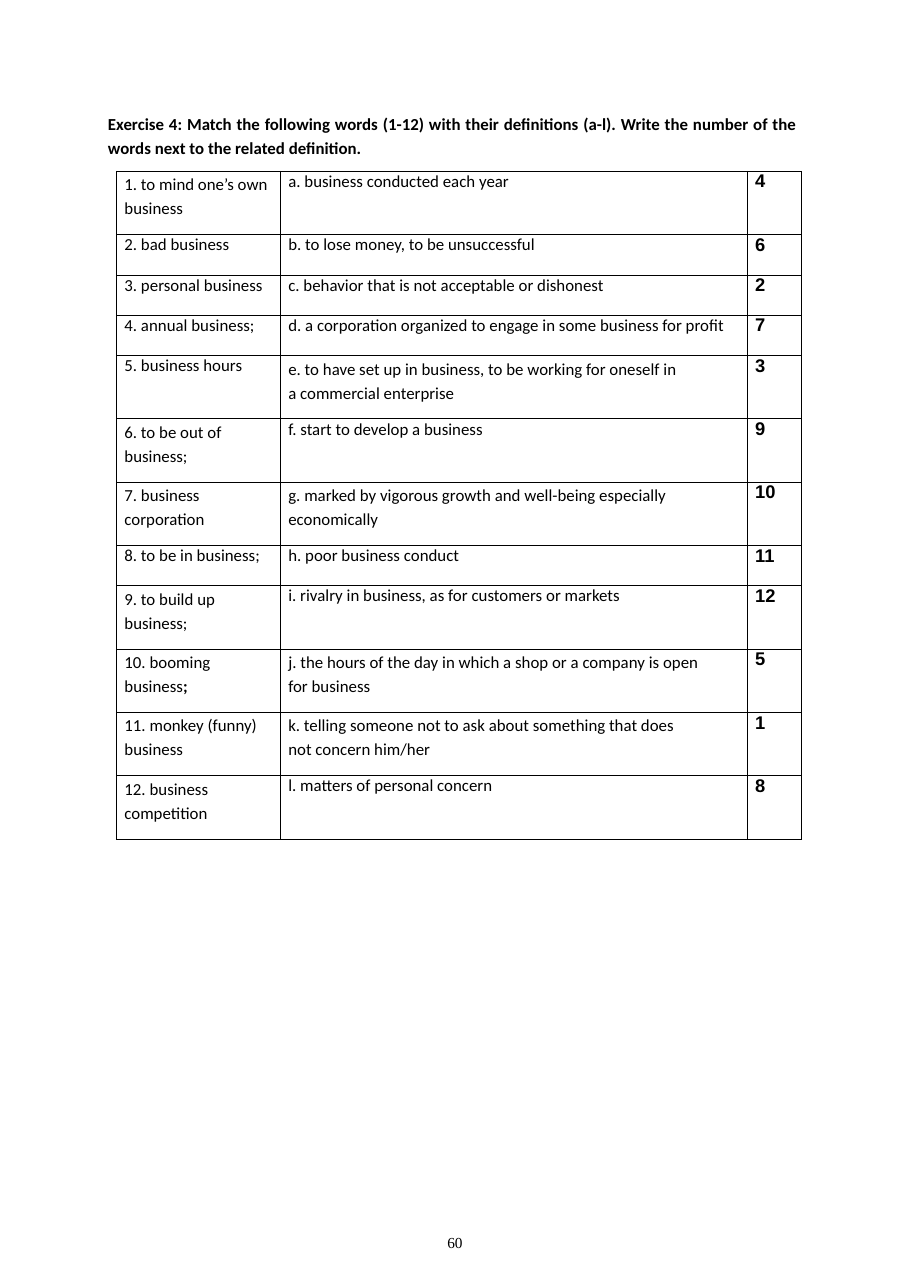
from dataclasses import dataclass

from lxml.etree import SubElement
from pptx import Presentation
from pptx.dml.color import RGBColor
from pptx.enum.text import MSO_ANCHOR, MSO_AUTO_SIZE, PP_ALIGN
from pptx.oxml.ns import qn
from pptx.util import Cm, Pt

TITLE = ("Exercise 4: Match the following words (1-12) with their definitions (a-l). "
         "Write the number of the words next to the related definition.")
PAGE = "60"

# word, lines it takes, definition, lines it takes, answer
ROWS = [
    ("1. to mind one’s own business", 2, "a. business conducted each year", 1, "4"),
    ("2. bad business", 1, "b. to lose money, to be unsuccessful", 1, "6"),
    ("3. personal business", 1, "c. behavior that is not acceptable or dishonest", 1, "2"),
    ("4. annual business;", 1,
     "d. a corporation organized to engage in some business for profit", 1, "7"),
    ("5. business hours", 1,
     "e. to have set up in business, to be working for oneself in a commercial enterprise",
     2, "3"),
    ("6. to be out of business;", 2, "f. start to develop a business", 1, "9"),
    ("7. business corporation", 2,
     "g. marked by vigorous growth and well-being especially economically", 2, "10"),
    ("8. to be in business;", 1, "h. poor business conduct", 1, "11"),
    ("9. to build up business;", 2, "i. rivalry in business, as for customers or markets",
     1, "12"),
    ("10. booming business;", 2,
     "j. the hours of the day in which a shop or a company is open for business", 2, "5"),
    ("11. monkey (funny) business", 2,
     "k. telling someone not to ask about something that does not concern him/her", 2, "1"),
    ("12. business competition", 2, "l. matters of personal concern", 1, "8"),
]
BOLD_END = "10. booming business;"
WIDTHS = [3.78, 10.77, 1.25]
HEIGHTS = {1: 0.93, 2: 1.46}
LEFT, TOP = 2.69, 3.95


@dataclass(frozen=True)
class Theme:
    ink: RGBColor = RGBColor(0, 0, 0)
    body: str = "Calibri"
    mark: str = "Arial"
    folio: str = "Times New Roman"
    text: float = 11
    answer: float = 12
    page: float = 10
    line: float = 0.58
    lead: float = 1.16
    head: float = 1.18


LOOK = Theme()


def add_run(para, text, font=LOOK.body, size=LOOK.text, bold=False):
    run = para.add_run()
    run.text = text
    run.font.name, run.font.size, run.font.bold = font, Pt(size), bold
    run.font.color.rgb = LOOK.ink


def clear_frame(frame):
    """Strip margins and fitting, and return the first paragraph."""
    frame.margin_left = frame.margin_right = 0
    frame.margin_top = frame.margin_bottom = 0
    frame.word_wrap = True
    frame.auto_size = MSO_AUTO_SIZE.NONE
    frame.vertical_anchor = MSO_ANCHOR.TOP
    return frame.paragraphs[0]


def add_border(cell):
    props = cell._tc.get_or_add_tcPr()
    for side in ("a:lnL", "a:lnR", "a:lnT", "a:lnB"):
        line = SubElement(props, qn(side), w=str(Pt(LOOK.line)))
        fill = SubElement(line, qn("a:solidFill"))
        SubElement(fill, qn("a:srgbClr"), val=str(LOOK.ink))


def set_cell(cell, lines, right):
    """Prepare a bordered cell and return its paragraph."""
    cell.margin_left, cell.margin_right = Cm(0.18), Cm(right)
    cell.margin_top = cell.margin_bottom = 0
    cell.vertical_anchor = MSO_ANCHOR.TOP
    add_border(cell)
    cell.fill.background()
    para = cell.text_frame.paragraphs[0]
    para.alignment = PP_ALIGN.LEFT
    para.line_spacing = LOOK.lead if lines > 1 else 1.0
    return para


def add_title(slide):
    title = slide.shapes.title
    title.left, title.top = Cm(2.49), Cm(2.54)
    title.width, title.height = Cm(15.9), Cm(1.02)
    para = clear_frame(title.text_frame)
    para.alignment = PP_ALIGN.JUSTIFY
    para.line_spacing = LOOK.head
    add_run(para, TITLE, bold=True)


def add_match(slide):
    tall = [HEIGHTS[max(row[1], row[3])] for row in ROWS]
    table = slide.shapes.add_table(len(ROWS), len(WIDTHS), Cm(LEFT), Cm(TOP),
                                   Cm(sum(WIDTHS)), Cm(sum(tall))).table
    table.first_row = table.horz_banding = False
    for col, width in zip(table.columns, WIDTHS):
        col.width = Cm(width)
    for i, (word, wlines, text, dlines, answer) in enumerate(ROWS):
        table.rows[i].height = Cm(tall[i])
        para = set_cell(table.cell(i, 0), wlines, 0.15)
        if word == BOLD_END:
            add_run(para, word[:-1])
            add_run(para, word[-1], bold=True)
        else:
            add_run(para, word)
        right = 0 if dlines == 1 else 0.75 if text.startswith("j") else 1.4
        add_run(set_cell(table.cell(i, 1), dlines, right), text)
        add_run(set_cell(table.cell(i, 2), 1, 0), answer,
                LOOK.mark, LOOK.answer, True)


def add_page(slide):
    box = slide.shapes.add_textbox(Cm(10.32), Cm(28.43), Cm(0.48), Cm(0.43))
    add_run(clear_frame(box.text_frame), PAGE, LOOK.folio, LOOK.page)


def main():
    deck = Presentation()
    deck.slide_width, deck.slide_height = Pt(595), Pt(842)
    slide = deck.slides.add_slide(deck.slide_layouts[5])
    add_title(slide)
    add_match(slide)
    add_page(slide)
    deck.save("out.pptx")


if __name__ == "__main__":
    main()
